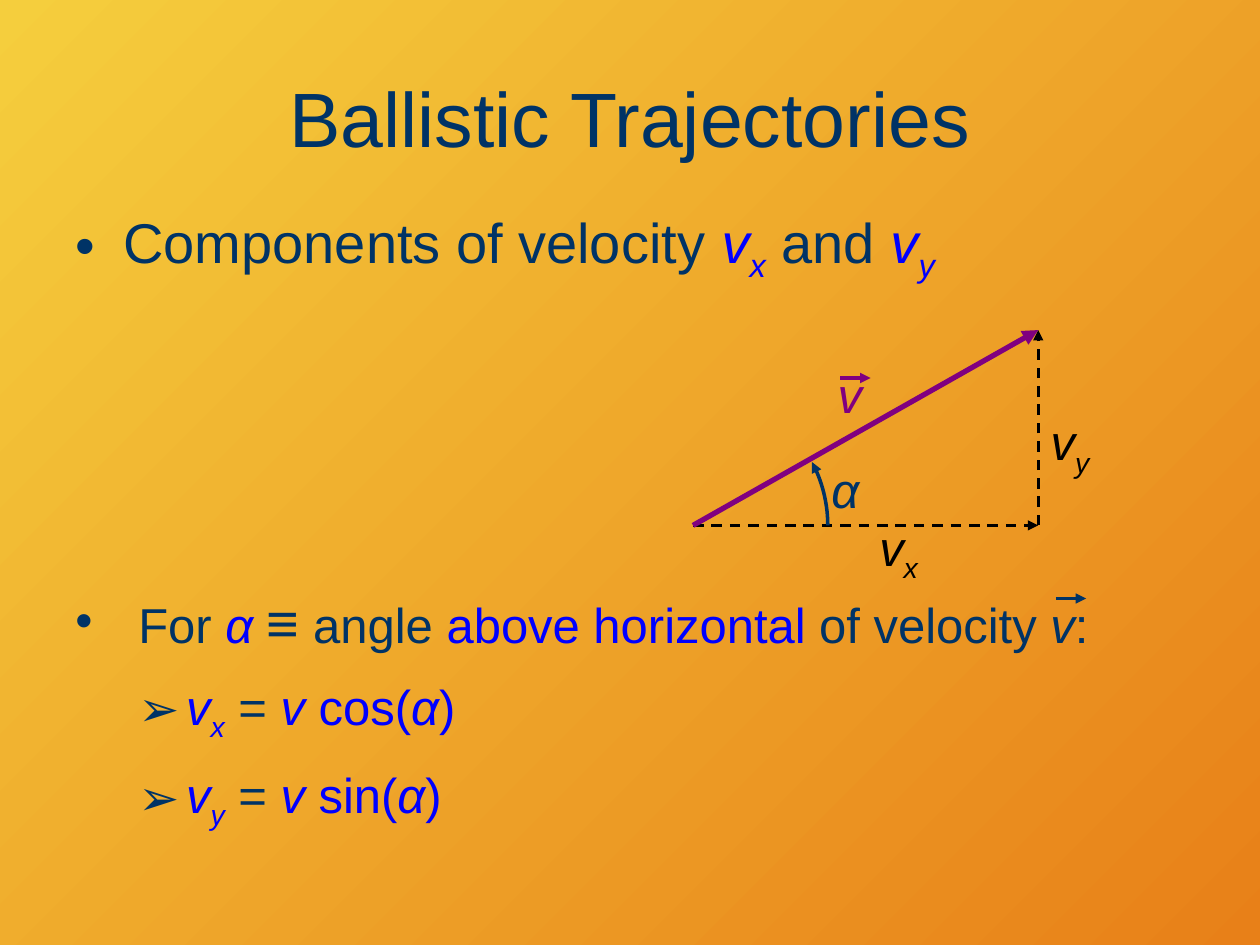
import math

from lxml import etree
from pptx import Presentation
from pptx import util as u
from pptx.dml import color
from pptx.enum import dml, shapes, text
from pptx.oxml import ns

NAVY, BLUE, PLUM, BLACK = "003366", "0000FF", "800080", "000000"


def rgb(code):
    return color.RGBColor.from_string(code)


def sub(node, tag, **vals):
    return etree.SubElement(node, ns.qn(tag), vals)


def apply(item, vals):
    for name, val in vals.items():
        setattr(item, name, val)


class Deck:
    """Holds the text style and the current slide, and adds elements to it."""

    font = "Arial"

    def __init__(self, wide, high):
        self.show = Presentation()
        apply(self.show, {"slide_width": u.Inches(wide), "slide_height": u.Inches(high)})
        self.slide = self.show.slides.add_slide(self.show.slide_layouts[6])
        self.home = self.slide.shapes

    def back(self, codes):
        fill = self.slide.background.fill
        fill.gradient()
        fill.gradient_angle = 315
        for stop, code, pos in zip(fill.gradient_stops, codes, (0, 1)):
            stop.color.rgb = rgb(code)
            stop.position = pos

    def group(self):
        self.home = self.slide.shapes.add_group_shape().shapes

    def ungroup(self):
        self.home = self.slide.shapes

    def box(self, place, **vals):
        frame = self.home.add_textbox(*map(u.Inches, place)).text_frame
        apply(frame, {"word_wrap": True, "auto_size": text.MSO_AUTO_SIZE.NONE, **vals})
        return frame

    def runs(self, para, parts, size, tint):
        for words, marks, *own in parts:
            run = para.add_run()
            run.text = words
            apply(run.font, {"name": self.font, "size": u.Pt(own[0] if own else size),
                             "italic": "i" in marks})
            run.font.color.rgb = rgb(BLUE if "b" in marks else tint)
            if "s" in marks:
                run._r.get_or_add_rPr().set("baseline", "-25000")

    def title(self, place, words):
        para = self.box(place, vertical_anchor=text.MSO_ANCHOR.MIDDLE).paragraphs[0]
        para.alignment = text.PP_ALIGN.CENTER
        self.runs(para, [(words, "")], 44, NAVY)

    def label(self, place, parts, tint):
        self.runs(self.box(place).paragraphs[0], parts, 28, tint)

    def list(self, place, rows, size):
        frame = self.box(place)
        for num, (mark, left, hang, parts) in enumerate(rows):
            para = frame.add_paragraph() if num else frame.paragraphs[0]
            apply(para, {"line_spacing": u.Pt(45), "level": int(mark == "➢")})
            props = para._p.get_or_add_pPr()
            props.set("marL", str(u.Inches(left)))
            props.set("indent", str(-u.Inches(hang)))
            sub(sub(props, "a:spcBef"), "a:spcPct", val="20000")
            sub(sub(props, "a:buClr"), "a:srgbClr", val=NAVY)
            sub(props, "a:buFont", typeface=self.font)
            sub(props, "a:buChar", char=mark)
            self.runs(para, parts, size, NAVY)

    def stroke(self, shape, tint, width, dash=None):
        line = shape.line
        line.color.rgb = rgb(tint)
        apply(line, {"width": u.Pt(width), "dash_style": dash})
        props = shape._element.spPr
        sub(props.find(ns.qn("a:ln")), "a:tailEnd", type="triangle")
        sub(props, "a:effectLst")

    def arrow(self, start, end, tint, width, dash=None):
        line = self.home.add_connector(shapes.MSO_CONNECTOR.STRAIGHT,
                                       *map(u.Inches, start + end))
        self.stroke(line, tint, width, dash)

    def arc(self, mid, radius, sweep, tint, width):
        steps = 14
        turns = [math.radians(sweep * n / steps) for n in range(steps + 1)]
        spots = [(u.Inches(mid[0] + radius * math.cos(turn)),
                  u.Inches(mid[1] - radius * math.sin(turn))) for turn in turns]
        pen = self.home.build_freeform(*spots[0])
        pen.add_line_segments(spots[1:], close=False)
        curve = pen.convert_to_shape()
        curve.fill.background()
        self.stroke(curve, tint, width)


def rule(axis, func):
    return [("v", "bi"), (axis, "bis"), (" = ", ""), ("v", "bi"),
            (f" {func}(", "b"), ("α", "bi"), (")", "b")]


def main():
    deck = Deck(10, 7.5)
    deck.back(("F5CE3D", "E88018"))
    deck.title((0.5, 0.3, 9, 1.25), "Ballistic Trajectories")
    deck.list((0.5, 1.58, 9, 0.85), [
        ("•", 0.38, 0.38, [("Components of velocity ", ""), ("v", "bi"), ("x", "bis"),
                           (" and ", ""), ("v", "bi"), ("y", "bis")])], 32)

    deck.group()
    deck.list((0.5, 4.52, 9, 2.57), [
        ("•", 0.5, 0.5, [("For ", ""), ("α ", "bi"), ("≡", "", 32), (" angle ", ""),
                         ("above horizontal ", "b"), ("of velocity ", ""),
                         ("v", "i"), (":", "")]),
        ("➢", 0.88, 0.38, rule("x", "cos")),
        ("➢", 0.88, 0.38, rule("y", "sin"))], 28)
    deck.arrow((8.38, 4.75), (8.62, 4.75), NAVY, 1.75)
    deck.ungroup()

    deck.group()
    base, foot, tip = (5.5, 4.17), (8.24, 4.17), (8.24, 2.62)
    dash = dml.MSO_LINE.DASH
    deck.arrow(foot, tip, BLACK, 1.5, dash)
    deck.label((8.24, 3.22, 0.86, 0.82), [("v", "i"), ("y", "is")], BLACK)
    deck.arrow(base, foot, BLACK, 1.5, dash)
    deck.label((6.88, 4.06, 0.62, 0.57), [("v", "i"), ("x", "is")], BLACK)
    deck.arrow(base, tip, PLUM, 3)
    deck.label((6.55, 2.84, 0.62, 0.82), [("v", "i")], PLUM)
    deck.arrow((6.67, 3), (6.91, 3), PLUM, 2)
    deck.arc(base, 1.07, 28, NAVY, 2)
    deck.label((6.5, 3.6, 0.62, 0.82), [("α", "i")], NAVY)
    deck.ungroup()

    deck.show.save("out.pptx")


if __name__ == "__main__":
    main()
